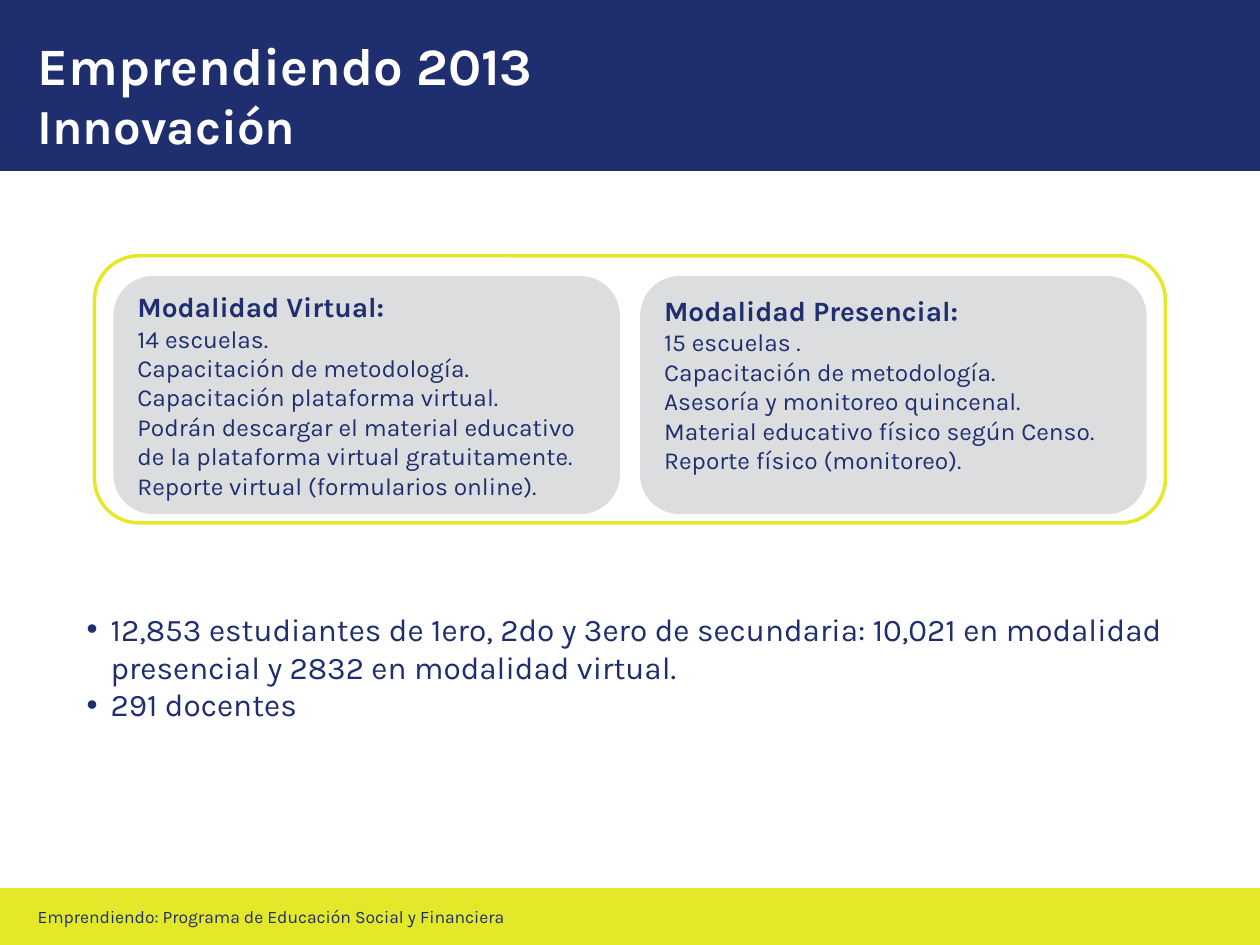
from dataclasses import dataclass
from typing import Any

from lxml import etree
from pptx import Presentation
from pptx import util as u
from pptx.dml.color import RGBColor
from pptx.enum import shapes, text
from pptx.oxml.ns import qn

NAVY = RGBColor(0x1E, 0x2E, 0x6E)
LIME = RGBColor(0xE3, 0xE8, 0x29)
GREY = RGBColor(0xDC, 0xDD, 0xDE)
WHITE = RGBColor(0xFF, 0xFF, 0xFF)

COLUMNS, ROWS = 100, 75
RECT = shapes.MSO_SHAPE.RECTANGLE
ROUNDED = shapes.MSO_SHAPE.ROUNDED_RECTANGLE
TOP, MIDDLE = text.MSO_ANCHOR.TOP, text.MSO_ANCHOR.MIDDLE


@dataclass
class Painter:
    deck: Any
    page: Any
    font: str = "Karla"

    def place(self, left, top, width, height):
        """Turn grid columns and rows into slide lengths."""
        column = self.deck.slide_width / COLUMNS
        row = self.deck.slide_height / ROWS
        return [u.Emu(round(length)) for length in
                (left * column, top * row, width * column, height * row)]

    def panel(self, kind, area, fill=None, line=None):
        shape = self.page.shapes.add_shape(kind, *self.place(*area))
        shape.shadow.inherit = False
        if fill is None:
            shape.fill.background()
        else:
            shape.fill.solid()
            shape.fill.fore_color.rgb = fill
        if line is None:
            shape.line.fill.background()
        else:
            shape.line.color.rgb = line
            shape.line.width = u.Pt(2)
        return shape

    def add_lines(self, frame, lines, color=NAVY, bullet=None):
        """Fill a frame with lines given as (wording, size, bold)."""
        for number, (wording, size, bold) in enumerate(lines):
            para = frame.paragraphs[0] if number == 0 else frame.add_paragraph()
            para.alignment = text.PP_ALIGN.LEFT
            if bullet:
                props = para._p.get_or_add_pPr()
                indent = u.Inches(0.19)
                props.set("marL", str(indent))
                props.set("indent", str(-indent))
                face = etree.SubElement(props, qn("a:buFont"))
                face.set("typeface", "Arial")
                etree.SubElement(props, qn("a:buChar")).set("char", bullet)
            span = para.add_run()
            span.text = wording
            span.font.name = self.font
            span.font.size = u.Pt(size)
            span.font.bold = bold
            span.font.color.rgb = color

    def label(self, area, lines, color=NAVY, bullet=None, wrap=True):
        box = self.page.shapes.add_textbox(*self.place(*area))
        box.text_frame.word_wrap = wrap
        box.text_frame.auto_size = text.MSO_AUTO_SIZE.SHAPE_TO_FIT_TEXT
        self.add_lines(box.text_frame, lines, color, bullet)

    def card(self, area, heading, details, anchor):
        frame = self.panel(ROUNDED, area, fill=GREY).text_frame
        frame.word_wrap = True
        frame.vertical_anchor = anchor
        self.add_lines(frame, [(heading, 16, True)] +
                       [(detail, 14, False) for detail in details])


def main():
    deck = Presentation()
    deck.slide_width, deck.slide_height = u.Inches(10), u.Inches(7.5)
    page = deck.slides.add_slide(deck.slide_layouts[6])
    painter = Painter(deck, page)

    # Footer and header bands
    painter.panel(RECT, (0, 70.6, COLUMNS, 4.4), LIME, LIME)
    painter.panel(RECT, (0, 0, COLUMNS, 13.4), NAVY, NAVY)
    painter.label((2, 71.4, 39.9, 2.7), [
        ("Emprendiendo: Programa de Educación Social y Financiera", 10, False),
    ], wrap=False)
    painter.label((2, 2.1, 66.9, 10.8), [
        ("Emprendiendo 2013", 30, True),
        ("Innovación", 28, True),
    ], WHITE)

    # The two modalities, side by side in a frame
    cards = [
        ("Modalidad Virtual:", [
            "14 escuelas.",
            "Capacitación de metodología.",
            "Capacitación plataforma virtual.",
            "Podrán descargar el material educativo de la plataforma"
            " virtual gratuitamente.",
            "Reporte virtual (formularios online).",
        ], MIDDLE),
        ("Modalidad Presencial:", [
            "15 escuelas .",
            "Capacitación de metodología.",
            "Asesoría y monitoreo quincenal.",
            "Material educativo físico según Censo.",
            "Reporte físico (monitoreo).",
        ], TOP),
    ]
    card_width, gap = 40.2, 1.6
    for number, (heading, details, anchor) in enumerate(cards):
        left = 9 + number * (card_width + gap)
        painter.card((left, 21.9, card_width, 18.9), heading, details, anchor)
    painter.panel(ROUNDED, (7.5, 20.3, 85, 21.2), line=LIME)

    # Reach of the programme
    painter.label((5.9, 47.9, 91.4, 10.1), [
        ("12,853 estudiantes de 1ero, 2do y 3ero de secundaria: 10,021 en"
         " modalidad presencial y 2832 en modalidad virtual.", 18, False),
        ("291 docentes", 18, False),
    ], bullet="•")

    deck.save("out.pptx")


if __name__ == "__main__":
    main()
